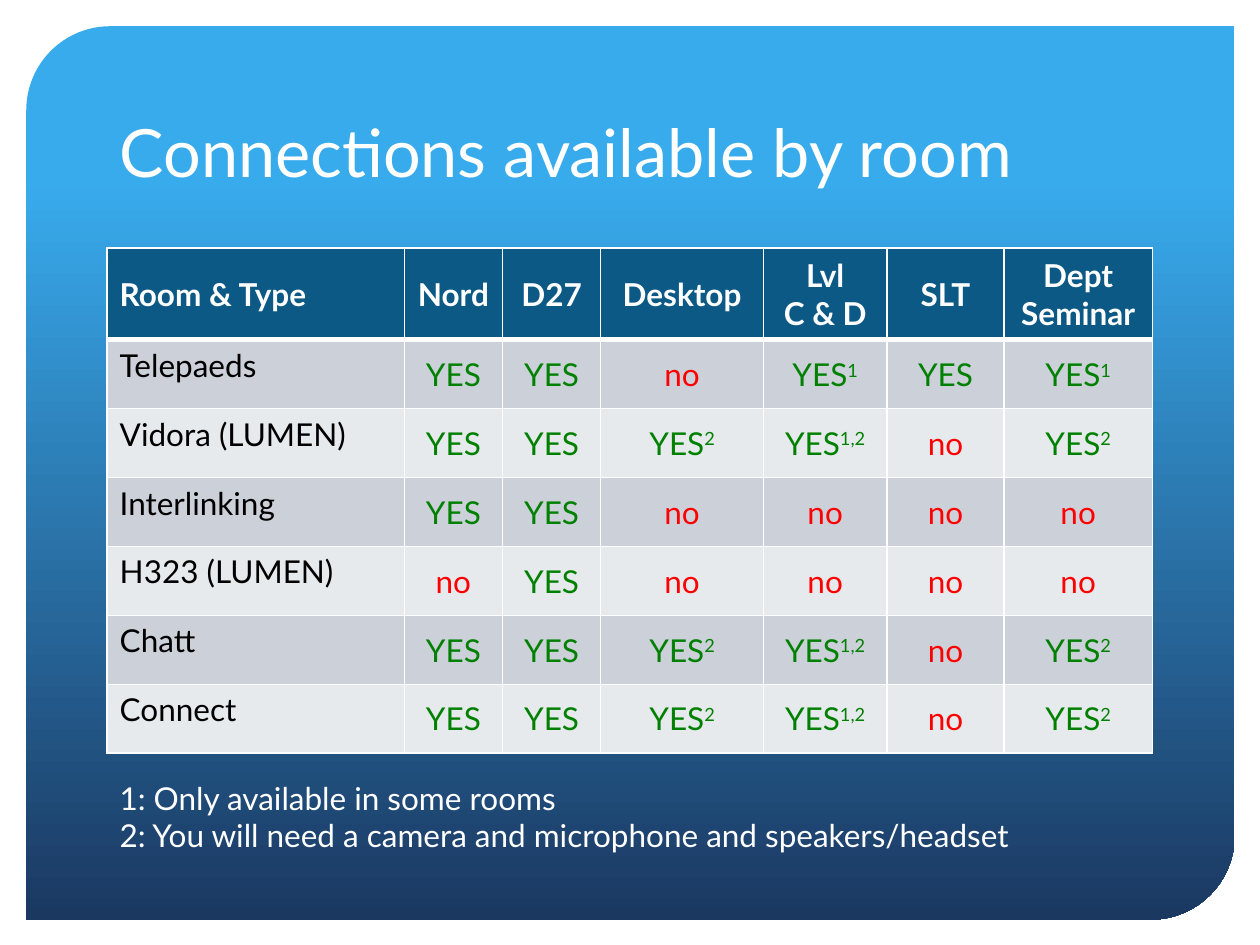
"""Build a slide with a table of the connections available in each room."""
from lxml.etree import SubElement
from pptx import Presentation
from pptx.dml.color import RGBColor
from pptx.enum.shapes import MSO_SHAPE
from pptx.enum.text import MSO_ANCHOR, PP_ALIGN
from pptx.oxml.ns import qn
from pptx.util import Cm, Pt

TITLE = "Connections available by room"
HEADINGS = ["Room & Type", "Nord", "D27", "Desktop", "Lvl\nC & D", "SLT", "Dept Seminar"]
CONNECTIONS = [
    ["Telepaeds", "YES", "YES", "no", "YES^1", "YES", "YES^1"],
    ["Vidora (LUMEN)", "YES", "YES", "YES^2", "YES^1,2", "no", "YES^2"],
    ["Interlinking", "YES", "YES", "no", "no", "no", "no"],
    ["H323 (LUMEN)", "no", "YES", "no", "no", "no", "no"],
    ["Chatt", "YES", "YES", "YES^2", "YES^1,2", "no", "YES^2"],
    ["Connect", "YES", "YES", "YES^2", "YES^1,2", "no", "YES^2"],
]
NOTES = [
    "1: Only available in some rooms",
    "2: You will need a camera and microphone and speakers/headset",
]
COLUMN_WIDTHS = [5.99, 1.98, 1.98, 3.28, 2.49, 2.36, 2.99]
HEADER_HEIGHT, ROW_HEIGHT = 1.85, 1.39
LEFT, WIDTH = Cm(2.16), Cm(21.06)

FONT = "Lato"
WHITE = RGBColor(0xFF, 0xFF, 0xFF)
BLACK = RGBColor(0x00, 0x00, 0x00)
GREEN = RGBColor(0x00, 0x80, 0x00)
RED = RGBColor(0xFF, 0x00, 0x00)
SKY = RGBColor(0x38, 0xAB, 0xED)
NAVY = RGBColor(0x1B, 0x38, 0x61)
HEADER_BLUE = RGBColor(0x0C, 0x59, 0x86)
BANDS = [RGBColor(0xCC, 0xD1, 0xD9), RGBColor(0xE7, 0xEA, 0xED)]
ANSWER_COLORS = {"YES": GREEN, "no": RED}


def write(para, text, size=18, color=WHITE, bold=False, align=PP_ALIGN.LEFT):
    """Fill a paragraph; a caret starts a superscript and a newline breaks the line."""
    para.alignment = align
    for line_index, line in enumerate(text.split("\n")):
        if line_index:
            para.add_line_break()
        for part_index, part in enumerate(line.split("^")):
            span = para.add_run()
            span.text = part
            span.font.name = FONT
            span.font.size = Pt(size)
            span.font.bold = bold
            span.font.color.rgb = color
            if part_index:
                span.font._element.set("baseline", "30000")


def add_background(page):
    """Draw the gradient panel behind the content."""
    panel = page.shapes.add_shape(
        MSO_SHAPE.ROUND_2_DIAG_RECTANGLE, Cm(0.53), Cm(0.53), Cm(24.36), Cm(18.01))
    panel.adjustments[0], panel.adjustments[1] = 0.094, 0
    panel.shadow.inherit = False
    panel.line.fill.background()
    panel.fill.gradient()
    panel.fill.gradient_angle = 270
    for stop, position, color in zip(panel.fill.gradient_stops, (0.17, 1), (SKY, NAVY)):
        stop.position = position
        stop.color.rgb = color


def add_text(page, lines, top, height, size=18, anchor=MSO_ANCHOR.TOP):
    """Add a wrapped text box with one paragraph per line."""
    frame = page.shapes.add_textbox(LEFT, Cm(top), WIDTH, Cm(height)).text_frame
    frame.word_wrap = True
    frame.vertical_anchor = anchor
    for index, line in enumerate(lines):
        para = frame.add_paragraph() if index else frame.paragraphs[0]
        write(para, line, size=size)


def set_borders(cell, top, bottom):
    """Give a cell white borders, with its top and bottom widths in points."""
    properties = cell._tc.get_or_add_tcPr()
    for side, width in (("L", 1), ("R", 1), ("T", top), ("B", bottom)):
        line = SubElement(properties, qn(f"a:ln{side}"), w=str(Pt(width)))
        fill = SubElement(line, qn("a:solidFill"))
        SubElement(fill, qn("a:srgbClr"), val=str(WHITE))


def add_connections(page):
    """Add the table of rooms and connection types."""
    rows = [HEADINGS] + CONNECTIONS
    heights = [HEADER_HEIGHT] + [ROW_HEIGHT] * len(CONNECTIONS)
    table = page.shapes.add_table(
        len(rows), len(HEADINGS), LEFT, Cm(5), WIDTH, Cm(sum(heights))).table
    for column, width in zip(table.columns, COLUMN_WIDTHS):
        column.width = Cm(width)
    for row_index, (values, height) in enumerate(zip(rows, heights)):
        table.rows[row_index].height = Cm(height)
        header = row_index == 0
        for column_index, value in enumerate(values):
            cell = table.cell(row_index, column_index)
            label = column_index == 0
            set_borders(cell, top=3 if row_index == 1 else 1, bottom=3 if header else 1)
            cell.fill.solid()
            cell.fill.fore_color.rgb = HEADER_BLUE if header else BANDS[(row_index - 1) % 2]
            cell.vertical_anchor = MSO_ANCHOR.TOP if label and not header else MSO_ANCHOR.MIDDLE
            color = WHITE if header else ANSWER_COLORS.get(value.split("^")[0], BLACK)
            write(cell.text_frame.paragraphs[0], value, color=color, bold=header,
                  align=PP_ALIGN.LEFT if label else PP_ALIGN.CENTER)


def main():
    """Assemble and save the deck."""
    deck = Presentation()
    deck.slide_width, deck.slide_height = Cm(25.4), Cm(19.05)
    page = deck.slides.add_slide(deck.slide_layouts[6])
    add_background(page)
    add_text(page, [TITLE], 1.07, 2.9, size=38, anchor=MSO_ANCHOR.BOTTOM)
    add_connections(page)
    add_text(page, NOTES, 15.57, 1.8)
    deck.save("out.pptx")


if __name__ == "__main__":
    main()
